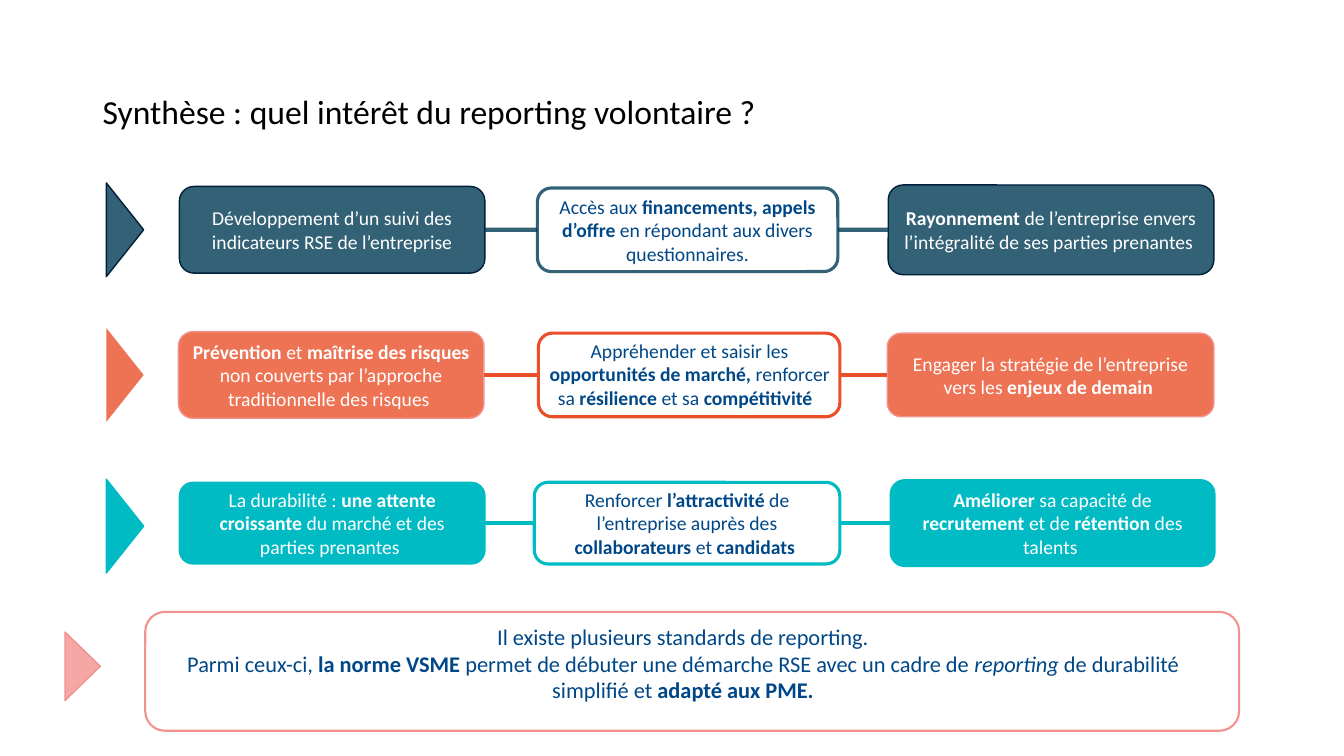
from lxml.etree import SubElement
from pptx import Presentation
from pptx.dml.color import RGBColor
from pptx.enum.shapes import MSO_CONNECTOR, MSO_SHAPE
from pptx.enum.text import MSO_ANCHOR as ANCHOR, PP_ALIGN as ALIGN
from pptx.oxml.ns import qn
from pptx.util import Inches, Pt

FONT = "Calibri"
BLACK, WHITE, BLUE = "000000", "FFFFFF", "004787"
NAVY, NAVY_EDGE = "003B55", "001F3B"
ORANGE, TEAL, PINK = "EA4F2A", "00BBC4", "F2928F"


def color(value):
    return RGBColor.from_string(value)


class Page:
    """Draws styled elements on one slide."""

    def __init__(self, slide):
        self.shapes = slide.shapes

    def paint(self, fill, value, alpha=100):
        """Apply a solid colour, or none, with an opacity in percent."""
        if value is None:
            fill.background()
            return
        fill.solid()
        fill.fore_color.rgb = color(value)
        if alpha < 100:
            solid = fill._xPr.find(qn("a:solidFill"))
            SubElement(solid[0], qn("a:alpha"), val=str(alpha * 1000))

    def shape(self, kind, place, fill=None, alpha=100, line=None, width=1, line_alpha=100):
        shape = self.shapes.add_shape(kind, *map(Inches, place))
        shape.shadow.inherit = False
        self.paint(shape.fill, fill, alpha)
        self.paint(shape.line.fill, line, line_alpha)
        if line:
            shape.line.width = Pt(width)
        return shape

    def box(self, place, **style):
        return self.shape(MSO_SHAPE.ROUNDED_RECTANGLE, place, **style)

    def marker(self, center_x, center_y, base, height, **style):
        """Triangle pointing right, centred on a point."""
        place = (center_x - base / 2, center_y - height / 2, base, height)
        self.shape(MSO_SHAPE.ISOSCELES_TRIANGLE, place, **style).rotation = 90

    def link(self, left_box, right_box, value, alpha):
        """Connect the facing sides of two boxes."""
        link = self.shapes.add_connector(MSO_CONNECTOR.STRAIGHT, 0, 0, 0, 0)
        link.begin_connect(left_box, 3)
        link.end_connect(right_box, 1)
        self.paint(link.line.fill, value, alpha)
        link.line.width = Pt(3)
        SubElement(link._element.spPr, qn("a:effectLst"))

    def label(self, box, lines, size, value, align=ALIGN.CENTER, anchor=ANCHOR.MIDDLE):
        """Fill a box with lines in which ** marks bold and _ marks italic."""
        frame = box.text_frame
        frame.word_wrap = True
        frame.vertical_anchor = anchor
        for index, line in enumerate(lines):
            para = frame.paragraphs[0] if index == 0 else frame.add_paragraph()
            para.alignment = align
            for bold_index, part in enumerate(line.split("**")):
                for italic_index, words in enumerate(part.split("_")):
                    if words:
                        span = para.add_run()
                        span.text = words
                        font = span.font
                        font.name, font.size = FONT, Pt(size)
                        font.bold = bold_index % 2 == 1
                        font.italic = italic_index % 2 == 1
                        font.color.rgb = color(value)

    def text(self, place, lines, size, value, **layout):
        box = self.shapes.add_textbox(*map(Inches, place))
        self.label(box, lines, size, value, **layout)
        return box


# Each row: centre, colour, fill opacity, line opacity, box edge, marker (centre, edge),
# then (left, width, height, text) for its three boxes
ROWS = [
    (2.28, NAVY, 80, 80, NAVY_EDGE, (2.28, NAVY_EDGE), [
        (1.78, 3.03, 0.86, "Développement d’un suivi des indicateurs RSE de l’entreprise"),
        (5.33, 2.98, 0.83, "Accès aux **financements, appels d’offre** en répondant aux divers "
                           "questionnaires."),
        (8.81, 3.23, 0.89, "**Rayonnement **de l’entreprise envers l’intégralité de ses "
                           "parties prenantes "),
    ]),
    (3.72, ORANGE, 80, 100, PINK, (3.72, None), [
        (1.77, 3.03, 0.86, "**Prévention **et **maîtrise des risques **non couverts par "
                           "l’approche traditionnelle des risques "),
        (5.34, 2.99, 0.83, ""),
        (8.8, 3.24, 0.83, "Engager la stratégie de l’entreprise vers les **enjeux de demain **"),
    ]),
    (5.19, TEAL, 100, 100, TEAL, (5.22, TEAL), [
        (1.78, 3.03, 0.81, "La durabilité : **une attente croissante **du marché et des "
                           "parties prenantes "),
        (5.3, 3.03, 0.81, "Renforcer **l’attractivité** de l’entreprise auprès des "
                          "**collaborateurs** et **candidats **"),
        (8.83, 3.22, 0.86, "**Améliorer **sa capacité de **recrutement** et de **rétention** "
                           "des talents "),
    ]),
]


def main():
    deck = Presentation()
    deck.slide_width, deck.slide_height = Inches(13.33), Inches(7.5)
    page = Page(deck.slides.add_slide(deck.slide_layouts[6]))

    # Title
    title = page.text((0.92, 0.4, 11.5, 1.45),
                      ["Synthèse : quel intérêt du reporting volontaire ?"],
                      24, BLACK, align=ALIGN.LEFT)
    title.text_frame.paragraphs[0].line_spacing = 0.9

    # Three rows of linked boxes, the middle one outlined
    for center, tone, alpha, line_alpha, edge, (tip, tip_edge), cells in ROWS:
        page.marker(1.24, tip, 0.93, 0.37, fill=tone, alpha=alpha, line=tip_edge)
        boxes = []
        for column, (left, width, height, words) in enumerate(cells):
            place = (left, center - height / 2, width, height)
            if column == 1:
                box = page.box(place, line=tone, width=2.25, line_alpha=line_alpha)
            else:
                box = page.box(place, fill=tone, alpha=alpha, line=edge)
            if words:
                page.label(box, [words], 14, BLUE if column == 1 else WHITE)
            boxes.append(box)
        for left_box, right_box in zip(boxes, boxes[1:]):
            page.link(left_box, right_box, tone, line_alpha)

    # Wider text over the middle orange box
    page.text((5.35, 3.31, 2.98, 0.81),
              ["Appréhender et saisir les **opportunités de marché,** renforcer sa"
               "** résilience **et sa **compétitivité  **"],
              14, BLUE, anchor=ANCHOR.TOP)

    # Conclusion
    page.marker(0.82, 6.61, 0.68, 0.35, fill=PINK, alpha=80, line=PINK)
    page.box((1.44, 6.07, 10.85, 1.18), line=PINK, width=1.5)
    page.text((1.71, 6.13, 10.13, 0.91),
              ["Il existe plusieurs standards de reporting.",
               "Parmi ceux-ci, **la norme VSME **permet de débuter une démarche RSE avec "
               "un cadre de _reporting _de durabilité simplifié et **adapté aux PME.**"],
              16, BLUE, anchor=ANCHOR.TOP)

    deck.save("out.pptx")


if __name__ == "__main__":
    main()
